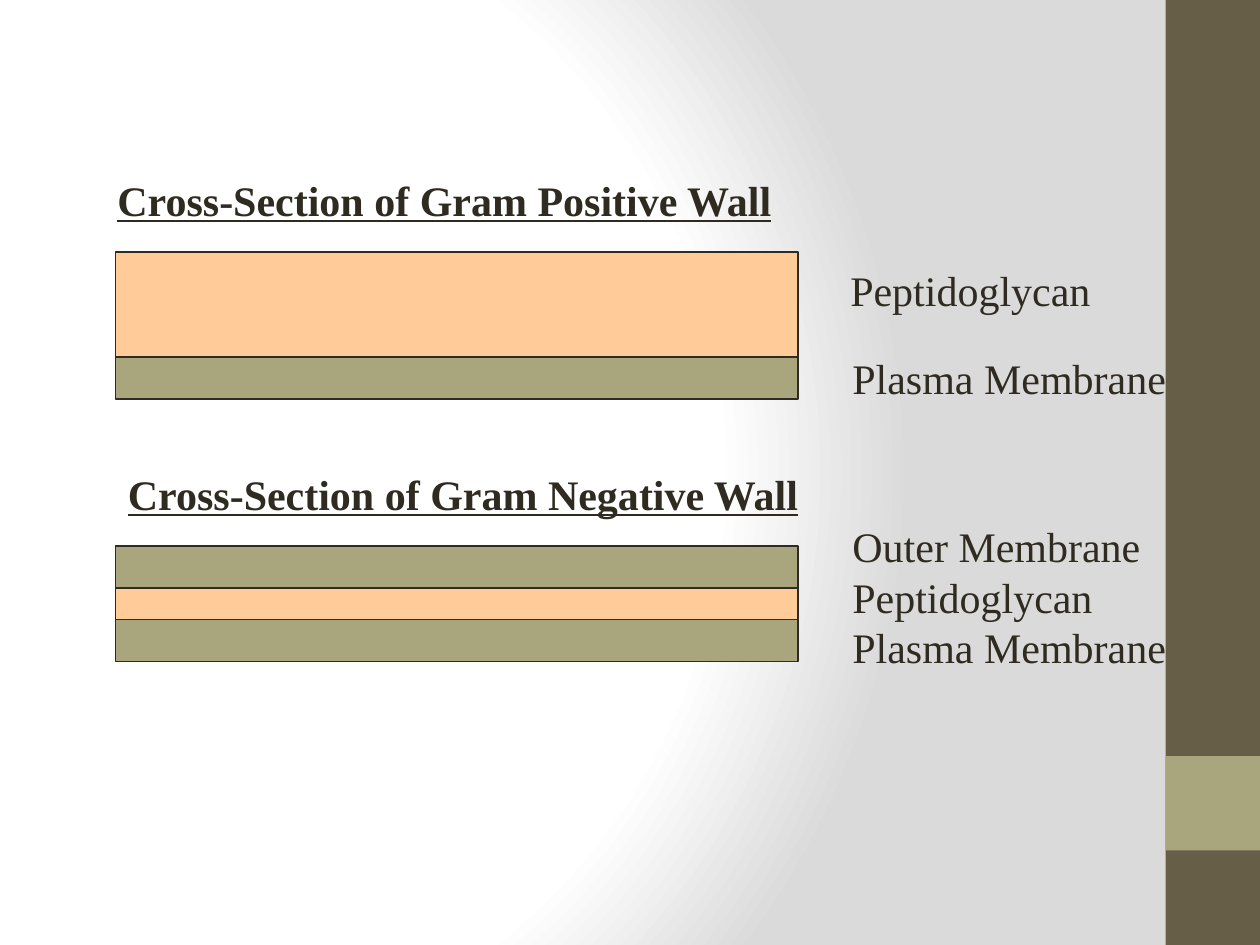
import pptx
import pptx.util
import pptx.dml.color
import pptx.enum.shapes
import pptx.enum.text
import pptx.oxml
import pptx.oxml.ns

# Content: places are in grid units of 1/12 inch
WALLS = [
    {"title": "Cross-Section of Gram Positive Wall", "box": (10, 65),
     "top": 24, "layers": [("wall", 10), ("skin", 4)]},
    {"title": "Cross-Section of Gram Negative Wall", "box": (11, 66.6),
     "top": 52, "layers": [("skin", 4), ("wall", 3), ("skin", 4)]},
]
LABELS = [  # left, top, width, height, lines
    (79.8, 24.6, 25.3, 6, ["Peptidoglycan"]),
    (80, 33, 32.3, 6, ["Plasma Membrane"]),
    (80, 49, 32.3, 15.6,
     ["Outer Membrane", "Peptidoglycan", "Plasma Membrane"]),
]
SIDE = [("bar", 0, 90), ("skin", 72, 9)]  # colour, top, height
LEFT, WIDE = 11, 65
EDGE, BAND = 111, 9

THEME = {
    "ink": "2F2B20", "wall": "FFCC99", "skin": "A9A57C", "bar": "675E47",
    "stops": [(0, "FFFFFF"), (75, "FFFFFF"), (100, "DADADA")],
    "font": "Times New Roman", "size": 24, "line": 0.75,
}


def unit(num):
    return pptx.util.Inches(num / 12)


def tint(name):
    return pptx.dml.color.RGBColor.from_string(THEME[name])


def paint(slide):
    """Radial gradient background."""
    stops = "".join(
        f'<a:gs pos="{pos * 1000}"><a:srgbClr val="{hue}"/></a:gs>'
        for pos, hue in THEME["stops"])
    back = pptx.oxml.parse_xml(
        f'<p:bg {pptx.oxml.ns.nsdecls("p", "a")}><p:bgPr>'
        f'<a:gradFill rotWithShape="1"><a:gsLst>{stops}</a:gsLst>'
        '<a:path path="circle"><a:fillToRect l="20000" t="50000" '
        'r="100000" b="50000"/></a:path></a:gradFill>'
        '<a:effectLst/></p:bgPr></p:bg>')
    slide.element.cSld.insert(0, back)


def block(slide, place, fill, line=True):
    kind = pptx.enum.shapes.MSO_SHAPE.RECTANGLE
    shape = slide.shapes.add_shape(kind, *map(unit, place))
    shape.shadow.inherit = False
    shape.fill.solid()
    shape.fill.fore_color.rgb = tint(fill)
    if line:
        shape.line.color.rgb = tint("ink")
        shape.line.width = pptx.util.Pt(THEME["line"])
    else:
        shape.line.fill.background()


def write(slide, place, lines, head=False):
    frame = slide.shapes.add_textbox(*map(unit, place)).text_frame
    frame.word_wrap = False
    frame.auto_size = pptx.enum.text.MSO_AUTO_SIZE.SHAPE_TO_FIT_TEXT
    for num, text in enumerate(lines):
        para = frame.add_paragraph() if num else frame.paragraphs[0]
        run = para.add_run()
        run.text = text
        font = run.font
        font.name = THEME["font"]
        font.size = pptx.util.Pt(THEME["size"])
        font.color.rgb = tint("ink")
        if head:
            font.bold = font.underline = True


def main():
    deck = pptx.Presentation()
    deck.slide_width = pptx.util.Inches(10)
    deck.slide_height = pptx.util.Inches(7.5)
    slide = deck.slides.add_slide(deck.slide_layouts[6])
    paint(slide)

    # Side bar
    for fill, top, high in SIDE:
        block(slide, (EDGE, top, BAND, high), fill, line=False)

    # Walls: a heading, then layers stacked downwards
    for wall in WALLS:
        left, wide = wall["box"]
        top = wall["top"]
        write(slide, (left, top - 8, wide, 6), [wall["title"]], head=True)
        for fill, high in wall["layers"]:
            block(slide, (LEFT, top, WIDE, high), fill)
            top += high

    # Layer names
    for *place, lines in LABELS:
        write(slide, place, lines)

    deck.save("out.pptx")


if __name__ == "__main__":
    main()
